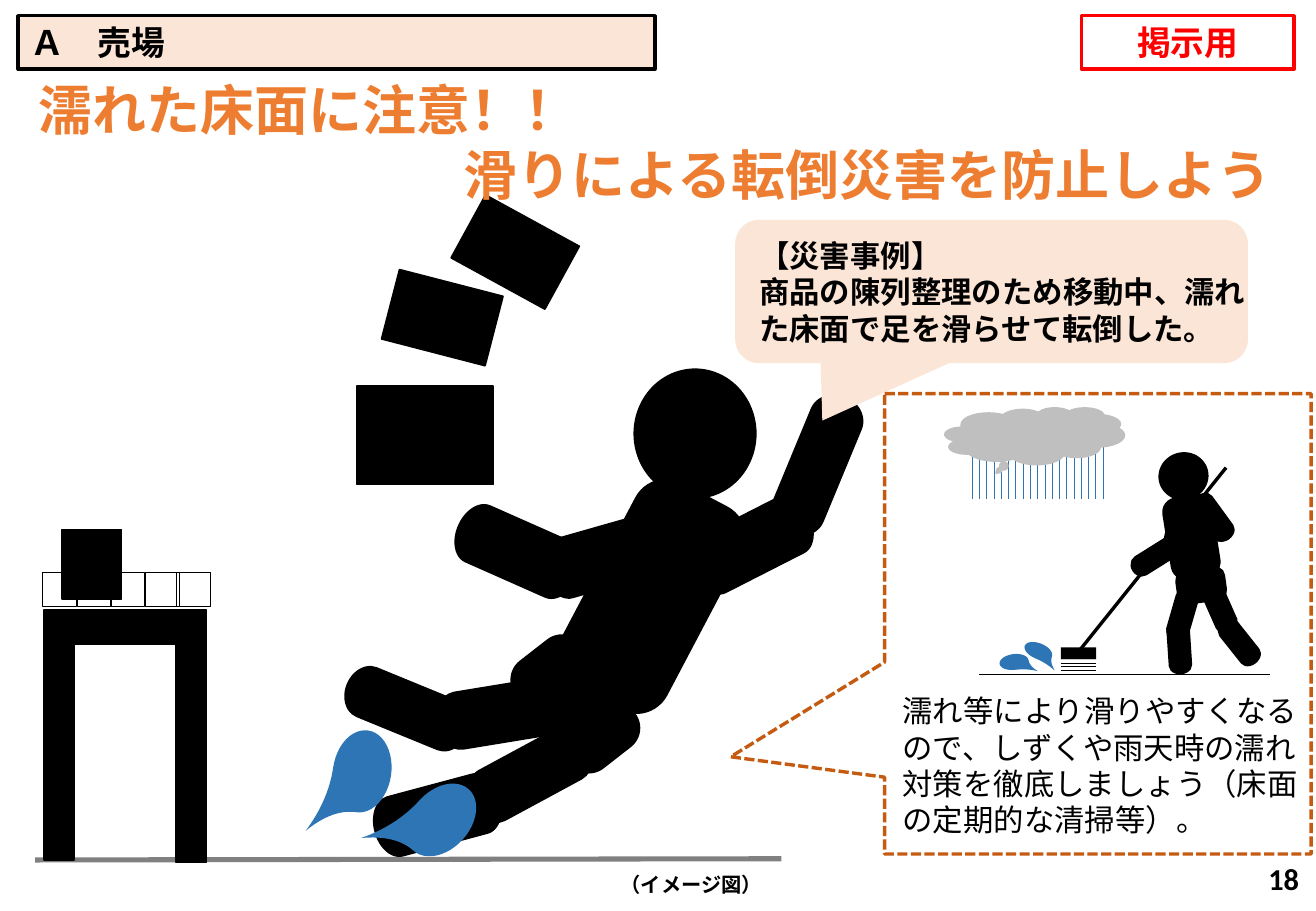
from dataclasses import dataclass
from typing import Optional

from lxml.etree import SubElement
from pptx import Presentation
from pptx.dml.color import RGBColor
from pptx.enum.dml import MSO_LINE, MSO_PATTERN
from pptx.enum.shapes import MSO_CONNECTOR, MSO_SHAPE
from pptx.enum.text import MSO_ANCHOR, MSO_AUTO_SIZE, PP_ALIGN
from pptx.oxml.ns import qn
from pptx.util import Inches, Pt

BLACK = RGBColor(0x00, 0x00, 0x00)
WHITE = RGBColor(0xFF, 0xFF, 0xFF)
PEACH = RGBColor(0xFB, 0xE5, 0xD6)
ORANGE = RGBColor(0xED, 0x7D, 0x31)
RUST = RGBColor(0xC5, 0x5A, 0x11)
RED = RGBColor(0xFF, 0x00, 0x00)
WATER = RGBColor(0x2E, 0x75, 0xB6)
CLOUD = RGBColor(0xBF, 0xBF, 0xBF)
FLOOR = RGBColor(0x80, 0x80, 0x80)

RECT, OVAL, ROUND = MSO_SHAPE.RECTANGLE, MSO_SHAPE.OVAL, MSO_SHAPE.ROUNDED_RECTANGLE
LIMB, DROP = MSO_SHAPE.FLOWCHART_TERMINATOR, MSO_SHAPE.TEAR
LEFT, CENTER, RIGHT = PP_ALIGN.LEFT, PP_ALIGN.CENTER, PP_ALIGN.RIGHT


@dataclass
class Part:
    """One shape, black with a thin outline unless told otherwise."""
    kind: MSO_SHAPE
    box: tuple[float, float, float, float]
    rotation: float = 0
    adjustments: tuple[float, ...] = ()
    fill: Optional[RGBColor] = BLACK
    line: Optional[RGBColor] = BLACK
    weight: float = 1
    pattern: Optional[MSO_PATTERN] = None


@dataclass
class Caption:
    """Paragraphs of text, each with its alignment."""
    paragraphs: tuple[tuple[str, PP_ALIGN], ...]
    size: float
    color: RGBColor = BLACK
    bold: bool = True
    grows: bool = True


def body(box: tuple, rotation: float) -> Part:
    return Part(ROUND, box, rotation, (0.287,))


def drop(box: tuple, rotation: float, tip: float) -> Part:
    return Part(DROP, box, rotation, (tip,), WATER, None)


def draw(shapes, part: Part):
    shape = shapes.add_shape(part.kind, *map(Inches, part.box))
    shape.rotation = part.rotation
    shape.shadow.inherit = False
    for index, value in enumerate(part.adjustments):
        shape.adjustments[index] = value
    if part.pattern is not None:
        shape.fill.patterned()
        shape.fill.pattern = part.pattern
        shape.fill.fore_color.rgb = part.fill
        shape.fill.back_color.rgb = WHITE
    elif part.fill is None:
        shape.fill.background()
    else:
        shape.fill.solid()
        shape.fill.fore_color.rgb = part.fill
    if part.line is None:
        shape.line.fill.background()
    else:
        shape.line.color.rgb = part.line
        shape.line.width = Pt(part.weight)
    return shape


def draw_all(shapes, parts: list[Part]) -> None:
    for part in parts:
        draw(shapes, part)


def draw_line(shapes, start: tuple, end: tuple, color: RGBColor, weight: float) -> None:
    line = shapes.add_connector(MSO_CONNECTOR.STRAIGHT, *map(Inches, start + end))
    line.line.color.rgb = color
    line.line.width = Pt(weight)
    SubElement(line._element.spPr, qn("a:effectLst"))


def write(shape, caption: Caption) -> None:
    frame = shape.text_frame
    frame_format = {
        "word_wrap": True,
        "auto_size": MSO_AUTO_SIZE.SHAPE_TO_FIT_TEXT if caption.grows else MSO_AUTO_SIZE.NONE,
    }
    for name, value in frame_format.items():
        setattr(frame, name, value)
    font_format = {"name": "Calibri", "size": Pt(caption.size), "bold": caption.bold}
    for index, (text, alignment) in enumerate(caption.paragraphs):
        paragraph = frame.add_paragraph() if index else frame.paragraphs[0]
        paragraph.alignment = alignment
        run = paragraph.add_run()
        run.text = text
        run.font.color.rgb = caption.color
        for name, value in font_format.items():
            setattr(run.font, name, value)


def add_text(shapes, box: tuple, caption: Caption):
    text_box = shapes.add_textbox(*map(Inches, box))
    write(text_box, caption)
    return text_box


def draw_fall(shapes) -> None:
    draw(shapes, Part(RECT, (0.51, 4.36, 0.49, 0.57)))
    draw_line(shapes, (0.29, 7.08), (6.43, 7.07), FLOOR, 3)
    # Falling worker
    limbs = [
        ((4.46, 4.33, 1.06, 0.5), 344.1), ((3.73, 4.29, 1.06, 0.5), 203.9),
        ((6.12, 3.61, 1.21, 0.44), 292.5), ((5.65, 4.24, 1.06, 0.5), 153),
        ((2.82, 5.62, 1.06, 0.43), 22.3), ((3.07, 6.46, 1.06, 0.5), 345),
        ((3.83, 6.15, 1.06, 0.46), 151.6), ((3.6, 5.64, 1.06, 0.47), 350.7),
    ]
    draw(shapes, Part(OVAL, (5.22, 3.04, 1, 1.06)))
    draw_all(shapes, [body((4.42, 4.42, 1.88, 0.98), 297.8), body((4.4, 5.24, 0.67, 1.11), 322.1)])
    draw_all(shapes, [Part(LIMB, box, turn) for box, turn in limbs])
    # Splashes and flying boxes
    draw_all(shapes, [
        drop((2.74, 6.01, 0.48, 0.68), 188.3, 1.62),
        drop((3.39, 6.41, 0.48, 0.68), 222, 1.62),
        Part(RECT, (2.94, 3.18, 1.12, 0.81)),
        Part(RECT, (3.2, 2.32, 0.88, 0.59), 14.5),
        Part(RECT, (3.8, 1.78, 0.88, 0.59), 28.7),
    ])
    # Display table and goods
    table = [(0.36, 5.08, 0.25, 2), (1.45, 5.08, 0.25, 2.02), (0.36, 5.02, 1.34, 0.28)]
    draw_all(shapes, [Part(RECT, box) for box in table])
    draw_all(shapes, [Part(RECT, (left, 4.71, 0.28, 0.28), fill=None, weight=0.5)
                      for left in (0.35, 0.64, 0.91, 1.2, 1.45)])


def draw_cleaning(shapes) -> None:
    # Worker with a mop
    limbs = [
        ((9.47, 4.3, 0.43, 0.18), 281.5), ((9.68, 4.28, 0.46, 0.17), 0),
        ((9.77, 4.17, 0.43, 0.18), 54), ((9.82, 4.91, 0.43, 0.18), 246.1),
        ((9.99, 5.2, 0.42, 0.18), 231.5), ((9.52, 4.97, 0.42, 0.18), 286.1),
        ((9.49, 5.24, 0.43, 0.18), 266.2), ((9.29, 4.49, 0.46, 0.17), 327.9),
    ]
    draw(shapes, Part(OVAL, (9.54, 3.73, 0.4, 0.38), 346.4))
    draw_all(shapes, [body((9.47, 4.22, 0.67, 0.4), 260.9), body((9.75, 4.62, 0.27, 0.4), 262.2)])
    draw_all(shapes, [Part(LIMB, box, turn) for box, turn in limbs])
    draw_line(shapes, (10.09, 3.85), (8.84, 5.41), BLACK, 2)
    draw_all(shapes, [
        Part(RECT, (8.73, 5.33, 0.29, 0.1), line=None),
        Part(RECT, (8.73, 5.43, 0.29, 0.1), line=None, pattern=MSO_PATTERN.ZIG_ZAG),
        drop((8.48, 5.24, 0.13, 0.24), 111.6, 1.535),
        drop((8.28, 5.33, 0.13, 0.24), 82.6, 1.535),
    ])
    draw_line(shapes, (8.06, 5.55), (10.45, 5.55), BLACK, 0.5)
    # Rain cloud
    draw_all(shapes, [
        Part(RECT, (7.94, 3.56, 1.18, 0.55), fill=WATER, line=None,
             pattern=MSO_PATTERN.DASHED_VERTICAL),
        Part(MSO_SHAPE.CLOUD_CALLOUT, (7.77, 3.35, 1.49, 0.48), fill=CLOUD, line=None),
    ])


def main() -> None:
    deck = Presentation()
    deck.slide_width, deck.slide_height = Inches(10.83), Inches(7.5)
    shapes = deck.slides.add_slide(deck.slide_layouts[6]).shapes

    # Section header and illustration
    section = draw(shapes, Part(RECT, (0.15, 0.13, 5.24, 0.44), fill=PEACH, weight=2))
    write(section, Caption((("Ａ　売場", LEFT),), 20))
    add_text(shapes, (5.01, 7.13, 1.78, 0.3), Caption((("（イメージ図）", LEFT),), 12))
    draw_fall(shapes.add_group_shape().shapes)

    # Accident case
    draw(shapes, Part(MSO_SHAPE.ROUNDED_RECTANGULAR_CALLOUT, (6.05, 1.81, 4.22, 1.18),
                      adjustments=(-0.33, 0.901, 0.167), fill=PEACH, line=None))
    add_text(shapes, (6.15, 1.9, 4.26, 1.01), Caption((
        ("【災害事例】", LEFT),
        ("商品の陳列整理のため移動中、濡れた床面で足を滑らせて転倒した。", LEFT)), 18))

    # Page number, title and posting label
    page_number = add_text(shapes, (8.35, 7.03, 2.44, 0.4),
                           Caption((("18", RIGHT),), 18, grows=False))
    page_number.text_frame.vertical_anchor = MSO_ANCHOR.MIDDLE
    add_text(shapes, (0.22, 0.58, 10.35, 1.18), Caption((
        ("濡れた床面に注意！！", LEFT), ("滑りによる転倒災害を防止しよう", RIGHT)), 32, ORANGE))
    posting = draw(shapes, Part(RECT, (8.9, 0.13, 1.75, 0.44), fill=None, line=RED, weight=2))
    write(posting, Caption((("掲示用", CENTER),), 20, RED))

    # Countermeasure
    draw_cleaning(shapes.add_group_shape().shapes)
    advice = draw(shapes, Part(MSO_SHAPE.RECTANGULAR_CALLOUT, (7.28, 3.24, 3.51, 3.79),
                               adjustments=(-0.861, 0.289), fill=None, line=RUST, weight=2))
    advice.line.dash_style = MSO_LINE.SQUARE_DOT
    add_text(shapes, (7.33, 5.65, 3.46, 1.31), Caption(((
        "濡れ等により滑りやすくなるので、しずくや雨天時の濡れ対策を徹底しましょう（床面の定期的な清掃等）。",
        LEFT),), 18, bold=False))

    deck.save("out.pptx")


if __name__ == "__main__":
    main()
